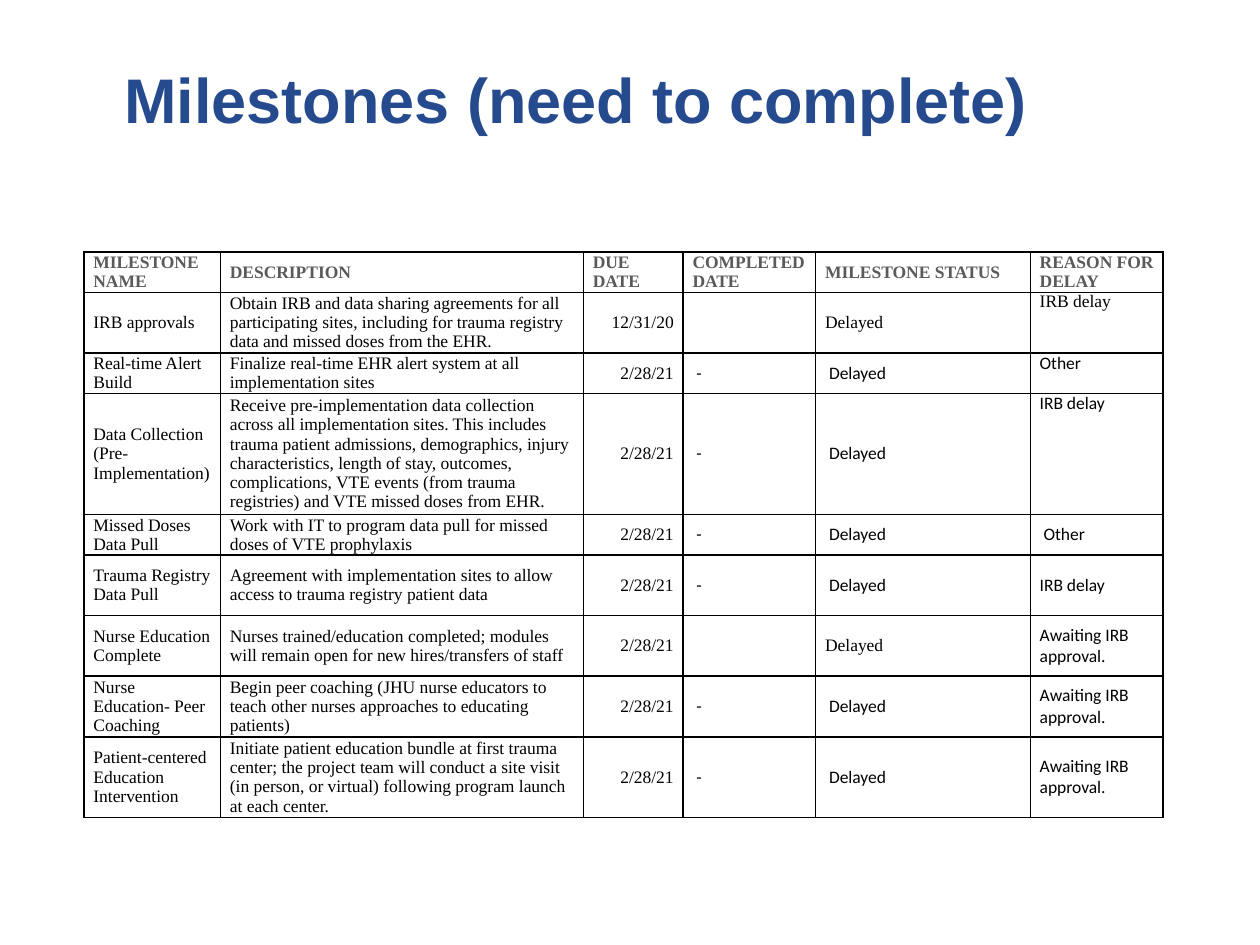
from lxml import etree
from pptx import Presentation
from pptx.dml.color import RGBColor
from pptx.enum import text
from pptx.oxml.ns import qn
from pptx.util import Pt

HEADERS = ["MILESTONE NAME", "DESCRIPTION", "DUE DATE", "COMPLETED DATE",
           "MILESTONE STATUS", "REASON FOR DELAY"]
MILESTONES = [
    ["IRB approvals",
     "Obtain IRB and data sharing agreements for all participating sites, "
     "including for trauma registry data and missed doses from the EHR.",
     "12/31/20", "", "Delayed", "IRB delay"],
    ["Real-time Alert Build",
     "Finalize real-time EHR alert system at all implementation sites",
     "2/28/21", " -", " Delayed", "Other"],
    ["Data Collection (Pre-Implementation)",
     "Receive pre-implementation data collection across all implementation "
     "sites. This includes trauma patient admissions, demographics, injury "
     "characteristics, length of stay, outcomes, complications, VTE events "
     "(from trauma registries) and VTE missed doses from EHR.",
     "2/28/21", " -", " Delayed", "IRB delay"],
    ["Missed Doses Data Pull",
     "Work with IT to program data pull for missed doses of VTE prophylaxis",
     "2/28/21", " -", " Delayed", " Other"],
    ["Trauma Registry Data Pull",
     "Agreement with implementation sites to allow access to trauma registry "
     "patient data",
     "2/28/21", " -", " Delayed", "IRB delay"],
    ["Nurse Education Complete",
     "Nurses trained/education completed; modules will remain open for new "
     "hires/transfers of staff",
     "2/28/21", "", "Delayed", "Awaiting IRB approval."],
    ["Nurse Education- Peer Coaching",
     "Begin peer coaching (JHU nurse educators to teach other nurses "
     "approaches to educating patients)",
     "2/28/21", " -", " Delayed", "Awaiting IRB approval."],
    ["Patient-centered Education Intervention",
     "Initiate patient education bundle at first trauma center; the project "
     "team will conduct a site visit (in person, or virtual) following "
     "program launch at each center.",
     "2/28/21", " -", " Delayed", "Awaiting IRB approval."],
]
COL_WIDTHS = [78, 207.4, 57, 75.8, 122.6, 75.8]
ROW_LINES = [2, 3, 2, 6, 2, 3, 3, 3, 4]
LINE_HEIGHT = 11.55
DUE, COMPLETED, REASON = 2, 3, 5
SERIF, SANS = "Times New Roman", "Calibri"


def rgb(hex_color):
    return RGBColor.from_string(hex_color)


def style_font(font, name, size, color, bold=False):
    font.name = name
    font.size = Pt(size)
    font.bold = bold
    font.color.rgb = rgb(color)


def add_title(slide, title):
    sp = slide.shapes.add_textbox(Pt(64), Pt(31), Pt(612), Pt(90))
    tf = sp.text_frame
    tf.word_wrap = True
    tf.text = title
    style_font(tf.paragraphs[0].runs[0].font, "Arial", 36, "254B8E", True)


def set_borders(cell, color, width):
    """Add the four border lines ahead of the cell's fill, as the schema asks."""
    tc_pr = cell._tc.get_or_add_tcPr()
    for i, side in enumerate(("a:lnL", "a:lnR", "a:lnT", "a:lnB")):
        line = etree.Element(qn(side), w=str(Pt(width)))
        fill = etree.SubElement(line, qn("a:solidFill"))
        etree.SubElement(fill, qn("a:srgbClr"), val=color)
        tc_pr.insert(i, line)


def cell_font(row, col, value):
    """Later rows use Calibri in the tracking columns, save for plain 'Delayed'."""
    if row > 1 and col >= COMPLETED and value != "Delayed":
        return SANS
    return SERIF


def fill_cell(cell, row, col, value):
    cell.margin_left = cell.margin_right = Pt(5.4)
    cell.margin_top = cell.margin_bottom = 0
    top = col == REASON and 1 <= row <= 3
    cell.vertical_anchor = text.MSO_ANCHOR.TOP if top else text.MSO_ANCHOR.MIDDLE
    cell.fill.solid()
    cell.fill.fore_color.rgb = rgb("FFFFFF")
    set_borders(cell, "000000", 1)

    cell.text_frame.text = value
    p = cell.text_frame.paragraphs[0]
    if row and col == DUE:
        p.alignment = text.PP_ALIGN.RIGHT
    font_name = cell_font(row, col, value)
    if font_name == SERIF:
        p.line_spacing = Pt(11)
    header = row == 0
    color = "5A5A5A" if header else "000000"
    for r in p.runs:
        style_font(r.font, font_name, 10, color, header)


def add_milestone_table(slide, rows):
    frame = slide.shapes.add_table(
        len(rows), len(COL_WIDTHS), Pt(48), Pt(144),
        Pt(sum(COL_WIDTHS)), Pt(sum(ROW_LINES) * LINE_HEIGHT))
    table = frame.table
    table.first_row = table.horz_banding = False
    for column, width in zip(table.columns, COL_WIDTHS):
        column.width = Pt(width)
    for table_row, lines in zip(table.rows, ROW_LINES):
        table_row.height = Pt(lines * LINE_HEIGHT)
    for row, values in enumerate(rows):
        for col, value in enumerate(values):
            fill_cell(table.cell(row, col), row, col, value)


def main():
    prs = Presentation()
    prs.slide_width, prs.slide_height = Pt(720), Pt(540)
    slide = prs.slides.add_slide(prs.slide_layouts[6])
    add_title(slide, "Milestones (need to complete)")
    add_milestone_table(slide, [HEADERS] + MILESTONES)
    prs.save("out.pptx")


if __name__ == "__main__":
    main()
